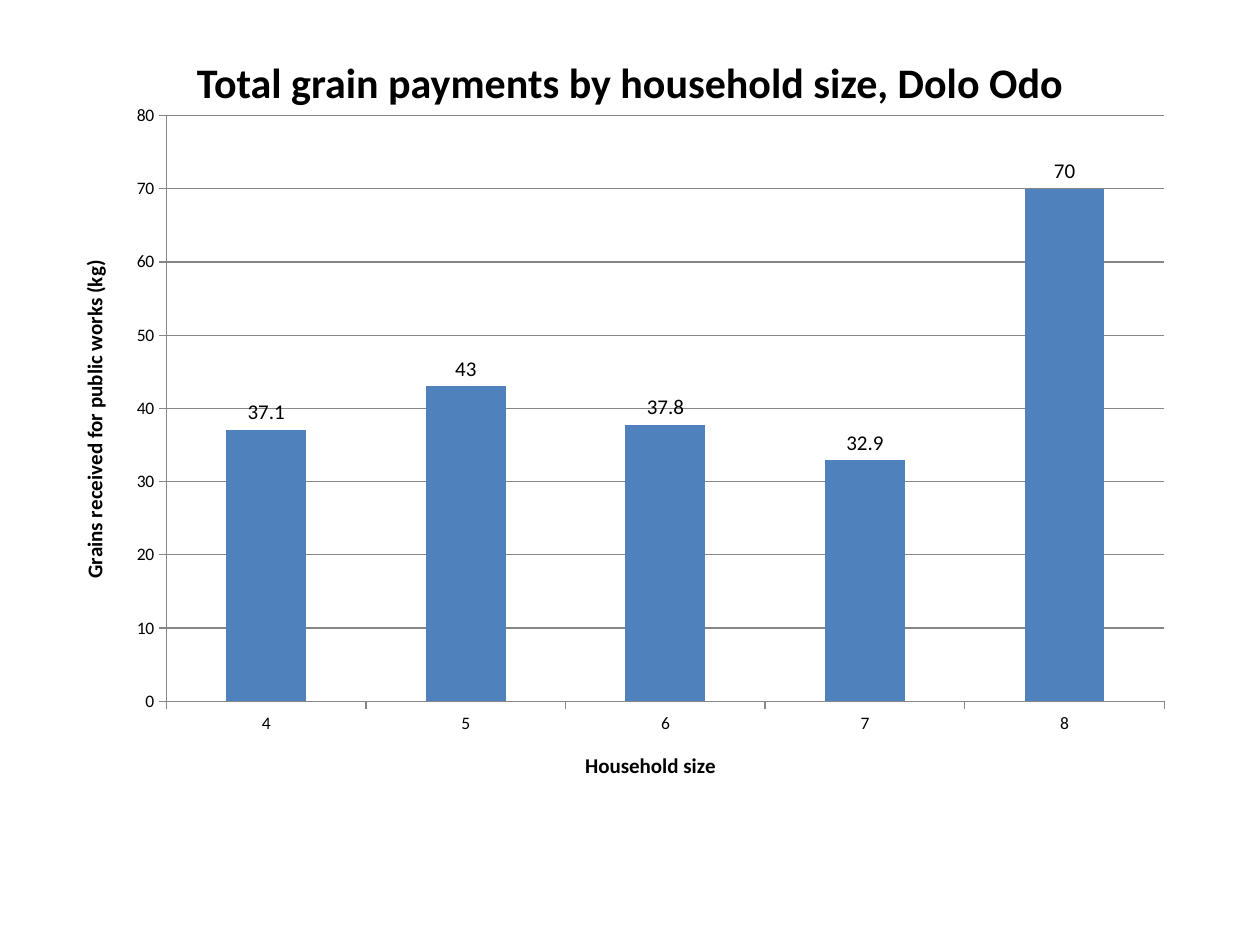
from pptx import Presentation
from pptx.chart.data import CategoryChartData
from pptx.dml.color import RGBColor
from pptx.enum.chart import XL_CHART_TYPE, XL_LABEL_POSITION, XL_TICK_MARK
from pptx.enum.text import MSO_ANCHOR, PP_ALIGN
from pptx.oxml import parse_xml
from pptx.oxml.ns import nsdecls
from pptx.util import Cm, Pt

FONT = "Calibri"
BLACK, GRAY, BLUE = "000000", "868686", "4F81BD"
GRAINS_BY_SIZE = {"4": 37.1, "5": 43, "6": 37.8, "7": 32.9, "8": 70}


def color(hex_code):
    """Return the colour for a hex string."""
    return RGBColor.from_string(hex_code)


def style_font(font, size, bold=False, hex_code=BLACK):
    """Apply typeface, size, weight and colour to a font."""
    font.name, font.size, font.bold = FONT, Pt(size), bold
    font.color.rgb = color(hex_code)


def write_text(frame, text, align=PP_ALIGN.CENTER, **font_format):
    """Put one formatted paragraph into a text frame."""
    paragraph = frame.paragraphs[0]
    paragraph.alignment = align
    run = paragraph.add_run()
    run.text = text
    style_font(run.font, **font_format)


def style_line(line):
    """Draw a chart line in thin gray."""
    line.color.rgb = color(GRAY)
    line.width = Pt(0.75)


def style_axis(axis, title):
    """Format an axis and give it a bold title."""
    axis.major_tick_mark = XL_TICK_MARK.OUTSIDE
    axis.minor_tick_mark = XL_TICK_MARK.NONE
    style_line(axis.format.line)
    style_font(axis.tick_labels.font, 10)
    write_text(axis.axis_title.text_frame, title, size=12, bold=True)


def place_plot(chart, **fractions):
    """Fix the inner plot area as fractions of the chart box."""
    plot_area = chart.element.xpath("c:chart/c:plotArea")[0]
    for layout in plot_area.xpath("c:layout"):
        plot_area.remove(layout)
    sizes = "".join(f'<c:{key} val="{value}"/>' for key, value in fractions.items())
    plot_area.insert(0, parse_xml(
        f'<c:layout {nsdecls("c")}><c:manualLayout><c:layoutTarget val="inner"/>'
        f'<c:xMode val="edge"/><c:yMode val="edge"/>{sizes}</c:manualLayout></c:layout>'))


def add_title(slide, left, top, width, height):
    """Place and fill the slide title."""
    title = slide.shapes.title
    title.left, title.top, title.width, title.height = left, top, width, height
    title.text_frame.vertical_anchor = MSO_ANCHOR.MIDDLE
    write_text(title.text_frame, "Total grain payments by household size, Dolo Odo",
               size=24, bold=True)


def add_grain_chart(slide, left, top, width, height):
    """Draw grain received per household size as columns."""
    grain_data = CategoryChartData()
    grain_data.categories = list(GRAINS_BY_SIZE)
    grain_data.add_series("Series 1", list(GRAINS_BY_SIZE.values()))
    chart = slide.shapes.add_chart(
        XL_CHART_TYPE.COLUMN_CLUSTERED, left, top, width, height, grain_data).chart
    chart.has_legend = chart.has_title = False
    style_font(chart.font, 10)
    place_plot(chart, x=0.1, y=0.03, w=0.88, h=0.82)

    style_axis(chart.category_axis, "Household size")
    grain_axis = chart.value_axis
    style_axis(grain_axis, "Grains received for public works (kg)")
    grain_axis.minimum_scale, grain_axis.maximum_scale, grain_axis.major_unit = 0, 80, 10
    style_line(grain_axis.major_gridlines.format.line)

    columns = chart.plots[0]
    columns.gap_width = 150
    columns.vary_by_categories = False
    grains = columns.series[0]
    grains.format.fill.solid()
    grains.format.fill.fore_color.rgb = color(BLUE)
    labels = grains.data_labels
    labels.show_value = True
    labels.position = XL_LABEL_POSITION.OUTSIDE_END
    style_font(labels.font, 12)


def main():
    """Build and save the slide."""
    deck = Presentation()
    deck.slide_width, deck.slide_height = Cm(25.4), Cm(19.05)
    slide = deck.slides.add_slide(deck.slide_layouts[5])
    add_title(slide, Cm(1.27), Cm(0.76), Cm(22.86), Cm(1.78))
    add_grain_chart(slide, Cm(1.07), Cm(1.9), Cm(22.86), Cm(14.4))
    deck.save("out.pptx")


if __name__ == "__main__":
    main()
